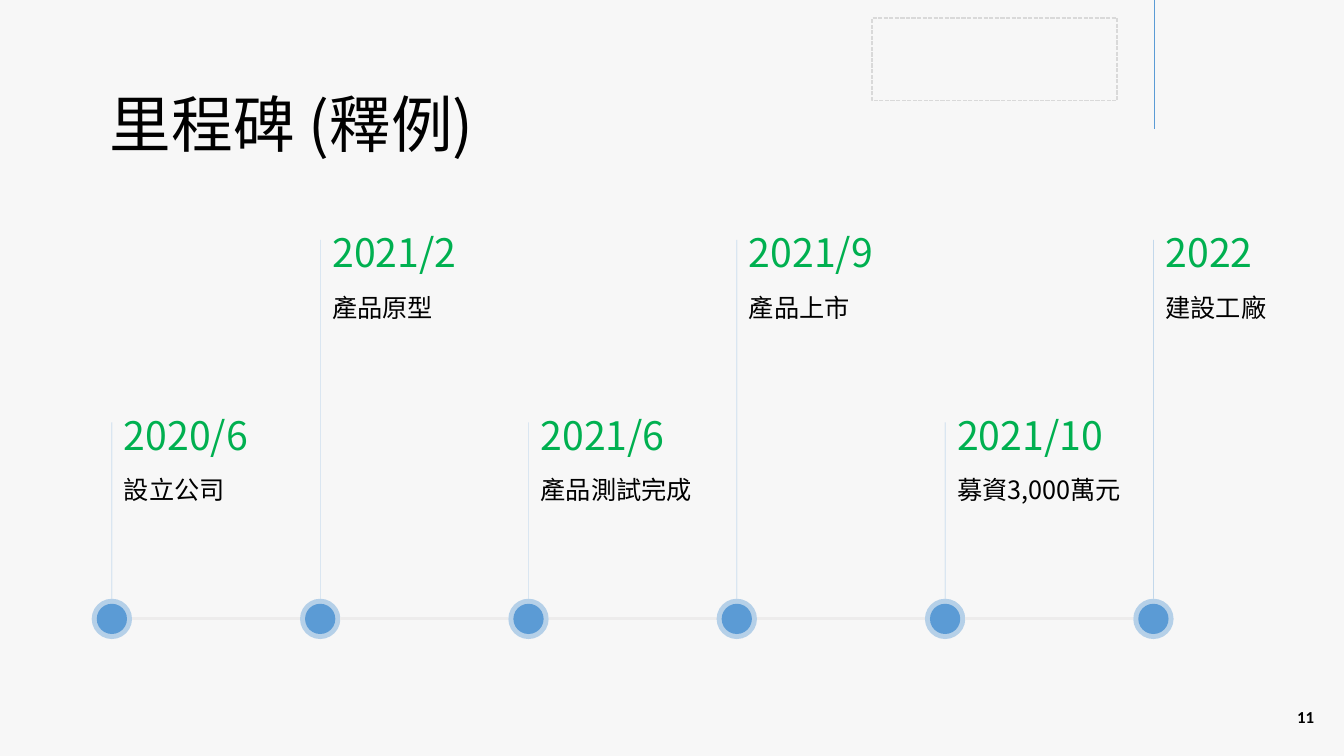
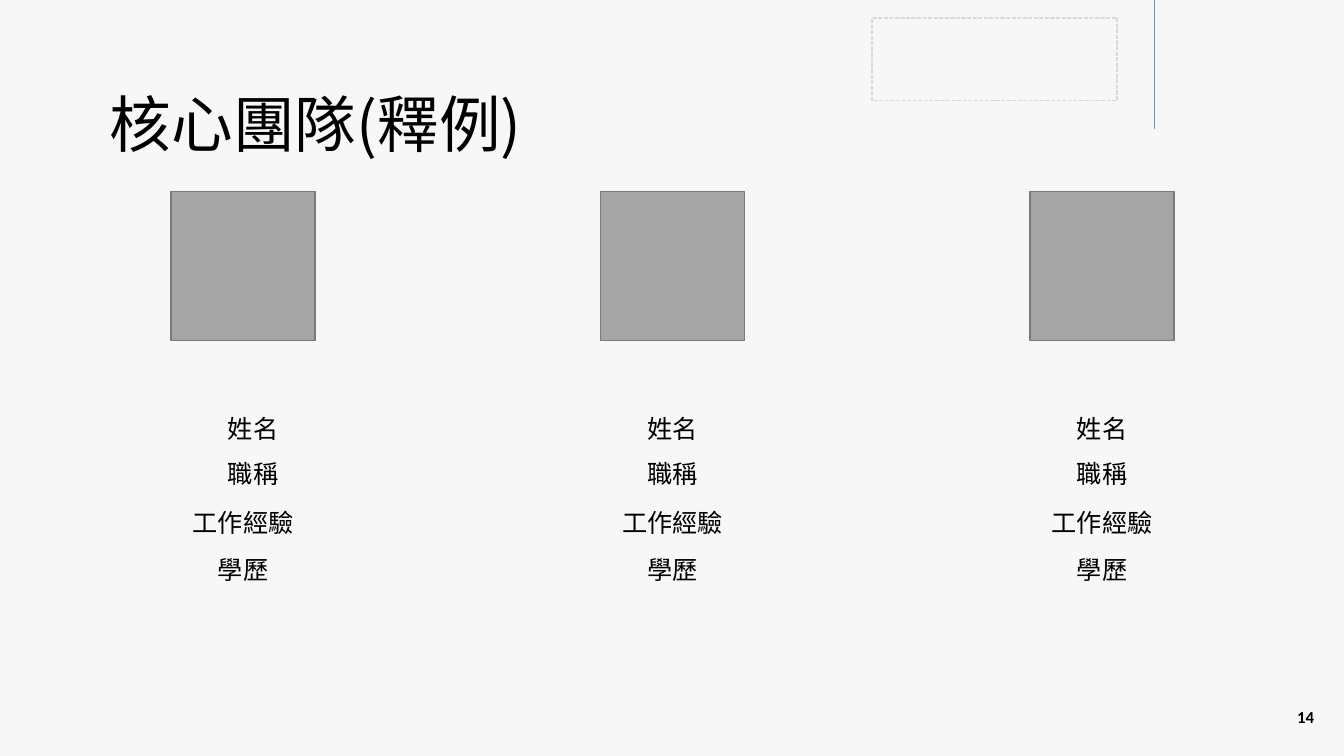
import pptx
import pptx.util
from pptx.dml.color import RGBColor
from pptx.enum.dml import MSO_LINE
from pptx.enum.shapes import MSO_CONNECTOR, MSO_SHAPE
from pptx.enum.text import MSO_ANCHOR, MSO_AUTO_SIZE, PP_ALIGN
from pptx.oxml import parse_xml
from pptx.oxml.ns import nsdecls, qn

# Shared look
W, H = 13.33, 7.5
PAPER = RGBColor(0xF7, 0xF7, 0xF7)
BLACK = RGBColor(0x00, 0x00, 0x00)
BLUE = RGBColor(0x5B, 0x9B, 0xD5)
GREEN = RGBColor(0x00, 0xB0, 0x50)
DASH = RGBColor(0xD9, 0xD9, 0xD9)
TRACK = RGBColor(0xED, 0xEC, 0xEC)
PHOTO = RGBColor(0xA5, 0xA5, 0xA5)
PHOTO_EDGE = RGBColor(0x7A, 0x7A, 0x7A)
CJK, LATIN = "Noto Sans CJK SC", "Calibri"

# Content
MILESTONE_TITLE = "里程碑 (釋例)"
MILESTONES = [
    ("2020/6", "設立公司"),
    ("2021/2", "產品原型"),
    ("2021/6", "產品測試完成"),
    ("2021/9", "產品上市"),
    ("2021/10", "募資3,000萬元"),
    ("2022", "建設工廠"),
]
TEAM_TITLE = "核心團隊(釋例)"
IDENTITY = ["姓名", "職稱"]
BACKGROUND = ["工作經驗", "學歷"]
# Nudge of each member's identity text from the column centre
IDENTITY_NUDGES = [0.1, 0, 0]

inch, Pt = pptx.util.Inches, pptx.util.Pt


def box(*lengths):
    return [inch(v) for v in lengths]


def set_alpha(fill, percent):
    """Make a solid fill, of a shape or of a line, partly transparent."""
    color = fill.find(".//" + qn("a:srgbClr"))
    color.append(parse_xml(f'<a:alpha {nsdecls("a")} val="{percent * 1000}"/>'))


def add_text(p, text, size, color=BLACK, font=CJK, bold=False):
    r = p.add_run()
    r.text = text
    r.font.size, r.font.bold, r.font.name = Pt(size), bold, font
    r.font.color.rgb = color
    r.font._element.find(qn("a:latin")).addnext(
        parse_xml(f'<a:ea {nsdecls("a")} typeface="{font}"/>'))


def set_insets(tf, left, top, right, bottom):
    tf.margin_left, tf.margin_top = inch(left), inch(top)
    tf.margin_right, tf.margin_bottom = inch(right), inch(bottom)


def add_box(s, x, y, w, h):
    tf = s.shapes.add_textbox(*box(x, y, w, h)).text_frame
    tf.word_wrap = True
    return tf


def add_line(s, x1, y1, x2, y2, color, width, alpha=None):
    ln = s.shapes.add_connector(MSO_CONNECTOR.STRAIGHT, *box(x1, y1, x2, y2))
    ln.line.color.rgb, ln.line.width = color, Pt(width)
    sp_pr = ln._element.spPr
    if alpha:
        set_alpha(sp_pr, alpha)
    sp_pr.append(parse_xml(f'<a:effectLst {nsdecls("a")}/>'))


def add_shape(s, kind, x, y, w, h, fill=None, edge=None, alpha=None):
    sp = s.shapes.add_shape(kind, *box(x, y, w, h))
    sp.shadow.inherit = False
    if fill is None:
        sp.fill.background()
    else:
        sp.fill.solid()
        sp.fill.fore_color.rgb = fill
    if alpha:
        set_alpha(sp._element.spPr, alpha)
    if edge is None:
        sp.line.fill.background()
    else:
        sp.line.color.rgb, sp.line.width = edge, Pt(1)
    return sp


def add_slide(prs, title, number):
    """Slide with the header frame, accent line, page number and title."""
    s = prs.slides.add_slide(prs.slide_layouts[5])
    frame = add_shape(s, MSO_SHAPE.RECTANGLE, 8.65, 0.18, 2.43, 0.82, edge=DASH)
    frame.line.dash_style = MSO_LINE.SQUARE_DOT
    add_line(s, 11.45, 0, 11.45, 1.28, BLUE, 0.5)

    # Page number: no side insets, so both digits fit on one line
    tf = add_box(s, 12.78, 6.95, 0.34, 0.33)
    set_insets(tf, 0, 0.05, 0, 0.05)
    tf.vertical_anchor = MSO_ANCHOR.MIDDLE
    tf.paragraphs[0].alignment = PP_ALIGN.CENTER
    add_text(tf.paragraphs[0], str(number), 12, font=LATIN, bold=True)

    sp = s.shapes.title
    sp.left, sp.top, sp.width, sp.height = box(1.09, 0.89, 4.9, 0.77)
    tf = sp.text_frame
    tf.auto_size = MSO_AUTO_SIZE.SHAPE_TO_FIT_TEXT
    tf.vertical_anchor = MSO_ANCHOR.TOP
    set_insets(tf, 0, 0.05, 0.1, 0.05)
    p = tf.paragraphs[0]
    p.alignment, p.line_spacing = PP_ALIGN.LEFT, 0.9
    add_text(p, title, 44)
    return s


def add_milestones(prs):
    s = add_slide(prs, MILESTONE_TITLE, 11)
    first, last, track_y = 1.11, 11.44, 6.14
    step = (last - first) / (len(MILESTONES) - 1)
    halo, dot = 0.2, 0.15  # radii
    label_tops = (4.03, 2.22)  # low and high labels alternate
    for i, (date, event) in enumerate(MILESTONES):
        x, top = first + i * step, label_tops[i % 2]
        # Node, and the track to the next one
        for radius, alpha in ((halo, 42), (dot, None)):
            add_shape(s, MSO_SHAPE.OVAL, x - radius, track_y - radius,
                      2 * radius, 2 * radius, fill=BLUE, alpha=alpha)
        if i < len(MILESTONES) - 1:
            add_line(s, x + halo, track_y, x + step - halo, track_y, TRACK, 2.25)
        # Stem and label
        add_line(s, x, track_y - halo, x, top + 0.16, BLUE, 0.25, alpha=51)
        width = min(2.03, W - x)
        rows = ((date, top, 0.57, 28, GREEN, 1.0),
                (event, top + 0.57, 0.43, 18, BLACK, 1.2))
        for text, y, height, size, color, spacing in rows:
            tf = add_box(s, x, y, width, height)
            set_insets(tf, 0.12, 0.05, 0.1, 0.05)
            tf.paragraphs[0].line_spacing = spacing
            add_text(tf.paragraphs[0], text, size, color)


def add_team(prs):
    s = add_slide(prs, TEAM_TITLE, 14)
    first, step = 2.41, 4.26  # column centres
    photo_w, text_w = 1.43, 2.99
    for i, nudge in enumerate(IDENTITY_NUDGES):
        x = first + i * step
        add_shape(s, MSO_SHAPE.RECTANGLE, x - photo_w / 2, 1.9, photo_w, 1.48,
                  fill=PHOTO, edge=PHOTO_EDGE)
        # Name and job title, one paragraph on two lines
        tf = add_box(s, x - text_w / 2 + nudge, 3.94, text_w, 0.92)
        tf.vertical_anchor = MSO_ANCHOR.MIDDLE
        p = tf.paragraphs[0]
        p.alignment, p.line_spacing = PP_ALIGN.CENTER, 1.5
        for n, text in enumerate(IDENTITY):
            if n:
                p.add_line_break()
            add_text(p, text, 18)
        # Experience and education
        tf = add_box(s, x - text_w / 2, 4.98, text_w, 0.88)
        for n, text in enumerate(BACKGROUND):
            p = tf.add_paragraph() if n else tf.paragraphs[0]
            p.alignment, p.space_after = PP_ALIGN.CENTER, Pt(12)
            add_text(p, text, 18)


def main():
    prs = pptx.Presentation()
    prs.slide_width, prs.slide_height = inch(W), inch(H)
    fill = prs.slide_master.background.fill
    fill.solid()
    fill.fore_color.rgb = PAPER
    add_milestones(prs)
    add_team(prs)
    prs.save("out.pptx")


if __name__ == "__main__":
    main()
